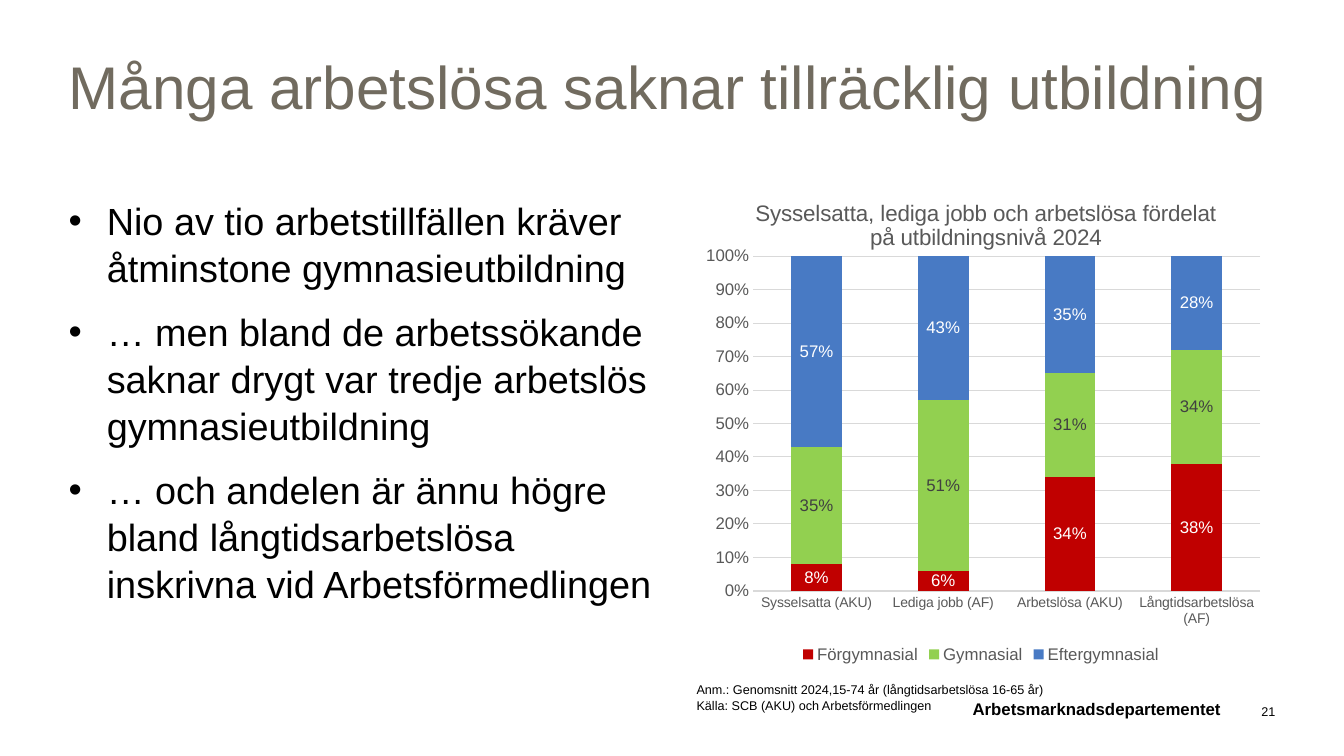
from dataclasses import dataclass

from lxml import etree
from pptx import Presentation
from pptx.chart.data import CategoryChartData
from pptx.dml.color import RGBColor
from pptx.enum.chart import XL_CHART_TYPE, XL_LABEL_POSITION, XL_LEGEND_POSITION, XL_TICK_MARK
from pptx.enum.text import MSO_ANCHOR, PP_ALIGN
from pptx.oxml import parse_xml
from pptx.oxml.ns import qn
from pptx.util import Inches, Pt

STACKED = XL_CHART_TYPE.COLUMN_STACKED_100
CENTER = XL_LABEL_POSITION.CENTER
LEGEND_BOTTOM = XL_LEGEND_POSITION.BOTTOM
NO_TICK = XL_TICK_MARK.NONE
TOP, BOTTOM = MSO_ANCHOR.TOP, MSO_ANCHOR.BOTTOM
LEFT, RIGHT = PP_ALIGN.LEFT, PP_ALIGN.RIGHT

FONT = "Arial"
BLACK, GREY, PALE = "000000", "595959", "D9D9D9"
CHART_NS = "http://schemas.openxmlformats.org/drawingml/2006/chart"


@dataclass
class Box:
    """A place on the slide, in percent of its width and height."""
    x: float
    y: float
    w: float
    h: float

    def emu(self) -> list[int]:
        return [int(prs.slide_width * self.x / 100), int(prs.slide_height * self.y / 100),
                int(prs.slide_width * self.w / 100), int(prs.slide_height * self.h / 100)]


@dataclass
class Level:
    name: str
    color: str
    label_color: str
    shares: tuple[float, ...]


LEVELS = [
    Level("Förgymnasial", "C00000", "FFFFFF", (0.08, 0.06, 0.34, 0.38)),
    Level("Gymnasial", "92D050", "404040", (0.35, 0.51, 0.31, 0.34)),
    Level("Eftergymnasial", "487AC4", "FFFFFF", (0.57, 0.43, 0.35, 0.28)),
]
GROUPS = ["Sysselsatta (AKU)", "Lediga jobb (AF)", "Arbetslösa (AKU)", "Långtidsarbetslösa (AF)"]
CHART_TITLE = "Sysselsatta, lediga jobb och arbetslösa fördelat på utbildningsnivå 2024"


def rgb(color: str) -> RGBColor:
    return RGBColor.from_string(color)


def style(font, size: float, color: str = BLACK, bold: bool = False) -> None:
    font.name, font.size, font.bold = FONT, Pt(size), bold
    font.color.rgb = rgb(color)


def add_bullet(p) -> None:
    pPr = p._p.get_or_add_pPr()
    pPr.set("marL", str(Inches(0.38)))
    pPr.set("indent", str(-Inches(0.38)))
    etree.SubElement(pPr, qn("a:buFont")).set("typeface", FONT)
    etree.SubElement(pPr, qn("a:buChar")).set("char", "•")


def add_text(box: Box, *lines: str, size: float, color: str = BLACK, bold: bool = False,
             align=LEFT, anchor=TOP, inset: tuple[float, float] = (0, 0), bullets: bool = False,
             after: float = 0, spacing: float = 1.0) -> None:
    tf = s.shapes.add_textbox(*box.emu()).text_frame
    tf.word_wrap, tf.vertical_anchor = True, anchor
    tf.margin_left = tf.margin_right = Inches(inset[0])
    tf.margin_top = tf.margin_bottom = Inches(inset[1])
    for i, line in enumerate(lines):
        p = tf.paragraphs[0] if i == 0 else tf.add_paragraph()
        if bullets:
            add_bullet(p)
        p.alignment, p.space_after, p.line_spacing = align, Pt(after), spacing
        r = p.add_run()
        r.text = line
        style(r.font, size, color, bold)


def manual_layout(x: float, y: float, w: float = 0, h: float = 0):
    """Layout in shares of the chart; with a width it is the inner plot area."""
    values = {"xMode": "edge", "yMode": "edge", "x": x, "y": y}
    if w:
        values = {"layoutTarget": "inner", **values, "w": w, "h": h}
    items = "".join(f'<c:{k} val="{v}"/>' for k, v in values.items())
    return parse_xml(f'<c:layout xmlns:c="{CHART_NS}"><c:manualLayout>{items}'
                     '</c:manualLayout></c:layout>')


def add_education_chart(box: Box) -> None:
    data = CategoryChartData(number_format="0%")
    data.categories = GROUPS
    for level in LEVELS:
        data.add_series(level.name, level.shares)
    chart = s.shapes.add_chart(STACKED, *box.emu(), data).chart
    style(chart.font, 12)

    # Title and plot area
    chart.has_title = True
    title = chart.chart_title
    title.include_in_layout = False
    p = title.text_frame.paragraphs[0]
    r = p.add_run()
    r.text = CHART_TITLE
    style(r.font, 16, GREY)
    title._element.find(qn("c:tx")).addnext(manual_layout(0.11, 0.04))
    for old in title._element.findall(qn("c:layout"))[1:]:
        title._element.remove(old)
    plot_area = chart._chartSpace.chart.plotArea
    for old in plot_area.findall(qn("c:layout")):
        plot_area.remove(old)
    plot_area.insert(0, manual_layout(0.113, 0.164, 0.861, 0.681))

    # Bars and their labels
    plot = chart.plots[0]
    plot.gap_width, plot.overlap, plot.vary_by_categories = 150, 100, False
    for series, level in zip(plot.series, LEVELS):
        series.format.fill.solid()
        series.format.fill.fore_color.rgb = rgb(level.color)
        labels = series.data_labels
        labels.show_value, labels.position = True, CENTER
        labels.number_format, labels.number_format_is_linked = "0%", False
        style(labels.font, 12, level.label_color)

    # Axes
    for axis, size in ((chart.category_axis, 10), (chart.value_axis, 12)):
        axis.major_tick_mark = axis.minor_tick_mark = NO_TICK
        style(axis.tick_labels.font, size, GREY)
    values = chart.value_axis
    values.minimum_scale, values.maximum_scale, values.major_unit = 0, 1, 0.1
    values.tick_labels.number_format = "0%"
    values.tick_labels.number_format_is_linked = False
    values.format.line.fill.background()
    values.has_major_gridlines = True
    for line in (chart.category_axis.format.line, values.major_gridlines.format.line):
        line.color.rgb, line.width = rgb(PALE), Pt(0.75)

    # Legend
    chart.has_legend = True
    chart.legend.position, chart.legend.include_in_layout = LEGEND_BOTTOM, False
    style(chart.legend.font, 12, GREY)


prs = Presentation()
prs.slide_width, prs.slide_height = Inches(13.33), Inches(7.5)
s = prs.slides.add_slide(prs.slide_layouts[6])

# Heading and message
add_text(Box(5.1, 5.2, 89.8, 15.07), "Många arbetslösa saknar tillräcklig utbildning",
         size=43, color="716B5F", inset=(0, 0.05), spacing=1.07)
add_text(Box(5.1, 25.2, 44.94, 61.07),
         "Nio av tio arbetstillfällen kräver åtminstone gymnasieutbildning",
         "… men bland de arbetssökande saknar drygt var tredje arbetslös gymnasieutbildning",
         "… och andelen är ännu högre bland långtidsarbetslösa inskrivna vid Arbetsförmedlingen",
         size=27, inset=(0, 0.05), bullets=True, after=12, spacing=1.04)

# Chart with its note
add_education_chart(Box(51.09, 23.2, 43.81, 65.07))
add_text(Box(51.09, 89.6, 28.21, 5.33),
         "Anm.: Genomsnitt 2024,15-74 år (långtidsarbetslösa 16-65 år)",
         "Källa: SCB (AKU) och Arbetsförmedlingen", size=9, inset=(0.1, 0.05))

# Footer
add_text(Box(24.68, 91.87, 66.17, 3.2), "Arbetsmarknadsdepartementet",
         size=12, bold=True, align=RIGHT, anchor=BOTTOM)
add_text(Box(90.92, 91.87, 3.98, 3.2), "21", size=9, align=RIGHT, anchor=BOTTOM)

prs.save("out.pptx")
